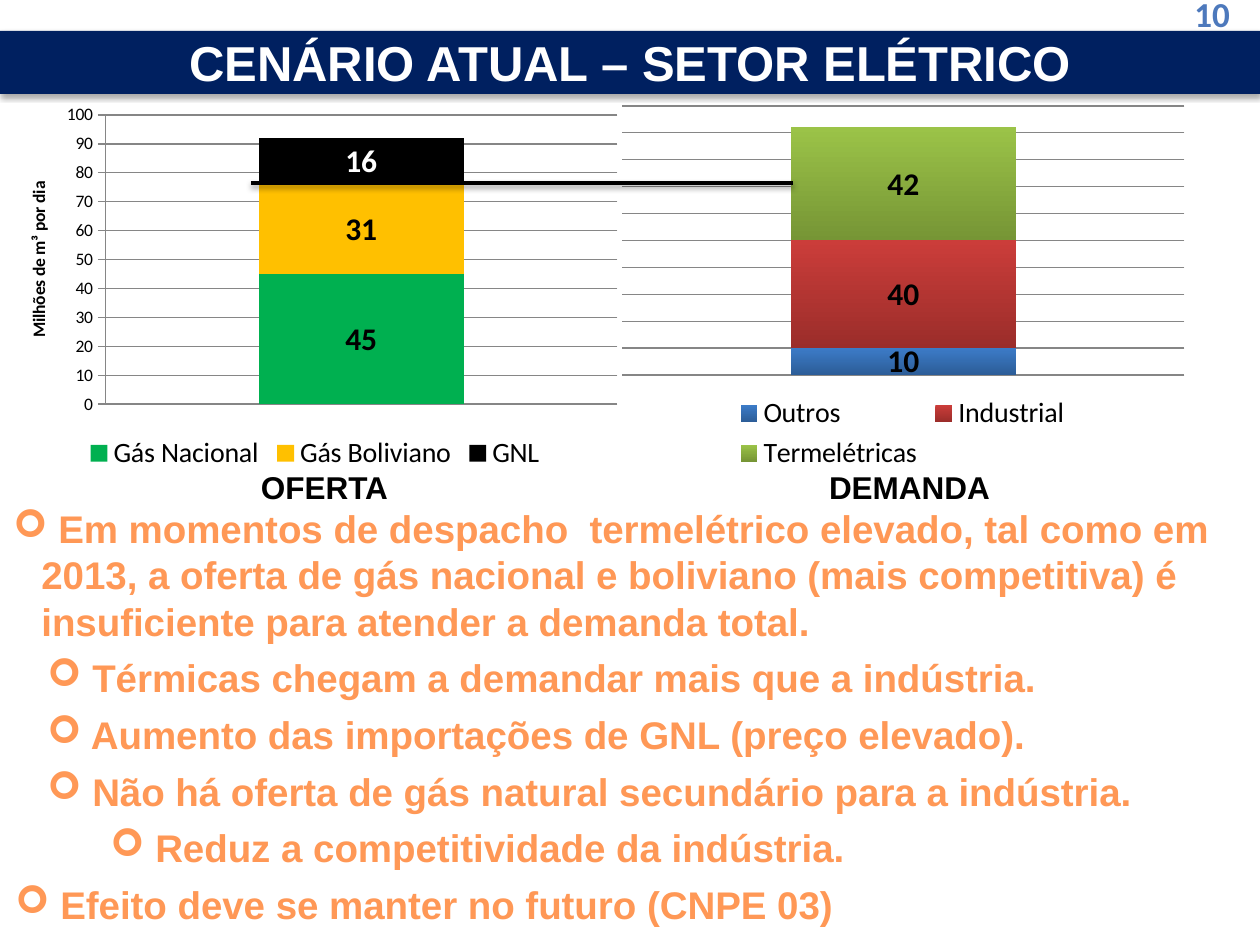
from lxml import etree
from pptx import Presentation
from pptx.chart.data import CategoryChartData
from pptx.dml.color import RGBColor
from pptx.enum.chart import XL_CHART_TYPE, XL_LEGEND_POSITION, XL_TICK_MARK
from pptx.enum.shapes import MSO_CONNECTOR, MSO_SHAPE
from pptx.enum.text import MSO_ANCHOR, PP_ALIGN
from pptx.oxml import parse_xml
from pptx.oxml.ns import nsdecls, qn
from pptx.util import Emu, Pt

STACKED = XL_CHART_TYPE.COLUMN_STACKED
BOTTOM = XL_LEGEND_POSITION.BOTTOM
CROSS, NO_TICK = XL_TICK_MARK.CROSS, XL_TICK_MARK.NONE
STRAIGHT, RECTANGLE = MSO_CONNECTOR.STRAIGHT, MSO_SHAPE.RECTANGLE
TOP, MIDDLE = MSO_ANCHOR.TOP, MSO_ANCHOR.MIDDLE
LEFT, CENTER = PP_ALIGN.LEFT, PP_ALIGN.CENTER
SCALE = 914400 / 126
color = RGBColor.from_string


def px(*lengths):
    return [Emu(round(length * SCALE)) for length in lengths]


def add_text(box, lines, font_name, size, hex_color, align=LEFT, anchor=TOP):
    text_frame = slide.shapes.add_textbox(*px(*box)).text_frame
    text_frame.word_wrap = True
    text_frame.vertical_anchor = anchor
    text_frame.text = "\n".join(lines)
    for paragraph in text_frame.paragraphs:
        paragraph.alignment = align
        font = paragraph.runs[0].font
        font.name, font.size, font.bold = font_name, Pt(size), True
        font.color.rgb = color(hex_color)
    return text_frame


presentation = Presentation()
presentation.slide_width, presentation.slide_height = px(1260, 945)
slide = presentation.slides.add_slide(presentation.slide_layouts[6])

# Title band and page number
band = slide.shapes.add_shape(RECTANGLE, *px(0, 31, 1260, 63))
band.fill.solid()
band.fill.fore_color.rgb = color("002060")
band.line.fill.background()
add_text((1182, -14, 74, 55), ["10"], "Calibri", 20, "4D79BC")
add_text((0, 27, 1260, 69), ["CENÁRIO ATUAL – SETOR ELÉTRICO"], "Arial", 28,
         "FFFFFF", CENTER, MIDDLE)

# Bulleted findings: text, left margin, level
findings = [
    (" Em momentos de despacho  termelétrico elevado, tal como em 2013, a oferta de gás "
     "nacional e boliviano (mais competitiva) é insuficiente para atender a demanda total.", 29, 0),
    (" Térmicas chegam a demandar mais que a indústria.", 63, 1),
    (" Aumento das importações de GNL (preço elevado).", 63, 1),
    (" Não há oferta de gás natural secundário para a indústria.", 63, 1),
    (" Reduz a competitividade da indústria.", 126, 2),
    (" Efeito deve se manter no futuro (CNPE 03)", 31, 2),
]
text_frame = add_text((0, 499, 1260, 456), [finding[0] for finding in findings],
                      "Arial", 22, "FF9856")
for paragraph, (_, margin, level) in zip(text_frame.paragraphs, findings):
    paragraph.level = level
    paragraph.space_before = Pt(6)
    properties = paragraph._p.get_or_add_pPr()
    margin, indent = px(margin, -28)
    properties.set("marL", str(margin))
    properties.set("indent", str(indent))
    etree.SubElement(properties, qn("a:buFont"), typeface="Wingdings")
    etree.SubElement(properties, qn("a:buChar"), char="➢")

# Stacked columns: box, plot area, value axis title, number format,
# then name, value, fill colours from top to bottom, label colour
charts = [
    ((0, 98, 630, 378), (105, 115, 512, 289), "Milhões de m³ por dia", "#,##0", [
        ("Gás Nacional", 45, ["00B050"], "000000"),
        ("Gás Boliviano", 31, ["FFC000"], "000000"),
        ("GNL", 16, ["000000"], "FFFFFF")]),
    ((610, 98, 585, 378), (622, 106, 562, 269), None,
     '_(* #,##0_);_(* \\(#,##0\\);_(* "-"??_);_(', [
        ("Outros", 10, ["3C7BC7", "2C5D98"], "000000"),
        ("Industrial", 40, ["CB3D3A", "9B2D2A"], "000000"),
        ("Termelétricas", 42, ["9BC348", "769535"], "000000")]),
]
for box, plot_box, axis_title, number_format, series_rows in charts:
    data = CategoryChartData()
    data.categories = ["1"]
    for name, value, _, _ in series_rows:
        data.add_series(name, [value])
    chart = slide.shapes.add_chart(STACKED, *px(*box), data).chart
    chart.has_title = False
    chart.font.name, chart.font.size = "Calibri", Pt(10)
    chart.font.color.rgb = color("000000")
    chart.has_legend = True
    chart.legend.position = BOTTOM
    chart.legend.include_in_layout = False
    chart.legend.font.size = Pt(16)

    chart.category_axis.visible = False
    axis = chart.value_axis
    axis.minimum_scale, axis.maximum_scale, axis.major_unit = 0, 100, 10
    axis.major_tick_mark, axis.minor_tick_mark = CROSS, NO_TICK
    axis.tick_labels.number_format = "0"
    axis.tick_labels.number_format_is_linked = False
    for line in (axis.major_gridlines.format.line, axis.format.line):
        line.color.rgb = color("868686")
        line.width = Pt(0.75)
    if axis_title:
        axis.axis_title.text_frame.text = axis_title
        font = axis.axis_title.text_frame.paragraphs[0].runs[0].font
        font.size, font.bold = Pt(10), True
    else:
        axis.visible = False

    plot = chart.plots[0]
    plot.gap_width, plot.overlap, plot.vary_by_categories = 150, 100, False
    for series, (_, _, fills, label_color) in zip(plot.series, series_rows):
        fill = series.format.fill
        if len(fills) == 1:
            fill.solid()
            fill.fore_color.rgb = color(fills[0])
        else:
            fill.gradient()
            fill.gradient_angle = 270
            for stop, hex_color in zip(fill.gradient_stops, fills):
                stop.color.rgb = color(hex_color)
        labels = series.data_labels
        labels.show_value = True
        labels.number_format = number_format
        labels.number_format_is_linked = False
        labels.font.size, labels.font.bold = Pt(18), True
        labels.font.color.rgb = color(label_color)

    # Fixed inner plot area, as fractions of the chart
    fractions = {"x": (plot_box[0] - box[0]) / box[2], "y": (plot_box[1] - box[1]) / box[3],
                 "w": plot_box[2] / box[2], "h": plot_box[3] / box[3]}
    plot_area = chart._chartSpace.chart.plotArea
    for old_layout in plot_area.findall(qn("c:layout")):
        plot_area.remove(old_layout)
    layout = etree.Element(qn("c:layout"))
    manual = etree.SubElement(layout, qn("c:manualLayout"))
    etree.SubElement(manual, qn("c:layoutTarget"), val="inner")
    for key in "xy":
        etree.SubElement(manual, qn(f"c:{key}Mode"), val="edge")
    for key, fraction in fractions.items():
        etree.SubElement(manual, qn(f"c:{key}"), val=f"{fraction:.3f}")
    plot_area.insert(0, layout)

# Chart captions
for left, caption in ((118, "OFERTA"), (703, "DEMANDA")):
    add_text((left, 462, 413, 50), [caption], "Arial", 18, "000000", CENTER)

# Level of national and Bolivian gas carried over to demand
level_line = slide.shapes.add_connector(STRAIGHT, *px(251, 183, 793, 183))
level_line.line.color.rgb = color("000000")
level_line.line.width = Pt(2)

# Soft shadows under the band and the line
for shape, opacity in ((band, 35), (level_line, 38)):
    shape._element.spPr.append(parse_xml(
        f'<a:effectLst {nsdecls("a")}><a:outerShdw blurRad="39400" dist="22000" dir="5400000" '
        f'rotWithShape="0"><a:srgbClr val="000000"><a:alpha val="{opacity}000"/></a:srgbClr>'
        '</a:outerShdw></a:effectLst>'))

presentation.save("out.pptx")
